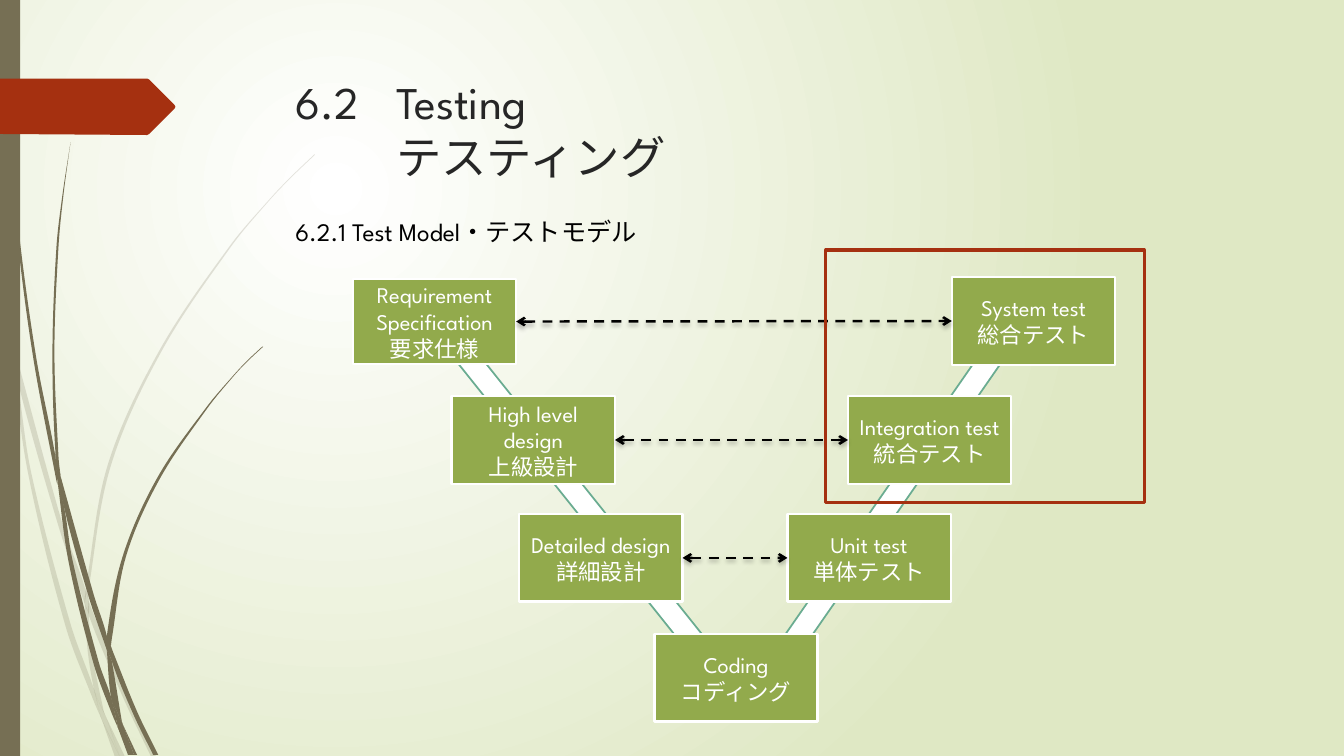
from math import dist

from lxml import etree
from pptx import Presentation
from pptx.dml.color import RGBColor
from pptx.enum import dml, shapes, text
from pptx.oxml import ns
from pptx.util import Inches, Pt

FONT = "League Spartan"
WHITE = RGBColor(0xFF, 0xFF, 0xFF)
BLACK = RGBColor(0, 0, 0)
INK = RGBColor(0x26, 0x26, 0x26)
PALE = RGBColor(0xDF, 0xE8, 0xC4)
BROWN = RGBColor(0x76, 0x6F, 0x54)
RUST = RGBColor(0xA5, 0x30, 0x10)
GREEN = RGBColor(0x92, 0xAA, 0x4C)
TEAL = RGBColor(0x6A, 0xAC, 0x91)

TITLE = ["6.2 \tTesting", "\t\tテスティング"]
SUBTITLE = ["6.2.1 Test Model・テストモデル"]

# name: (English, Japanese, left, top, height)
BOX_W = 1.62
STEPS = {
    "requirement": ("Requirement Specification", "要求仕様", 3.5, 2.77, 0.84),
    "high level": ("High level design", "上級設計", 4.48, 3.93, 0.87),
    "detailed": ("Detailed design", "詳細設計", 5.15, 5.1, 0.87),
    "coding": ("Coding", "コディング", 6.49, 6.29, 0.87),
    "unit": ("Unit test", "単体テスト", 7.81, 5.1, 0.87),
    "integration": ("Integration test", "統合テスト", 8.41, 3.93, 0.87),
    "system": ("System test", "総合テスト", 9.44, 2.75, 0.87),
}
PAIRS = [("requirement", "system"), ("high level", "integration"), ("detailed", "unit")]

# left, top, width, height, rotation
V_ARMS = [(7.35, 3.05, 3.14, 4.01, 356.7), (4.14, 3.19, 3.12, 3.73, 101.5)]

# Each blade piece: left edge and right edge, both from top to bottom
PALE_GRASS = [
    ([(0, 2.99), (.1, 3.44), (.11, 3.5)], [(0, 2.82), (.09, 3.22), (.11, 3.5)]),
    ([(.14, 3.45), (.17, 3.76), (.58, 5.22), (.84, 5.99)],
     [(.14, 3.45), (.62, 5.2), (.85, 5.86), (.84, 5.99)]),
    ([(.88, 5.96), (.88, 6.1), (1.23, 6.94), (1.5, 7.51)],
     [(.88, 5.96), (.92, 6.07), (1.27, 6.92), (1.55, 7.51)]),
    ([(1.05, 7.11), (1.19, 7.51)], [(1.05, 7.11), (1.24, 7.51)]),
    ([(.11, 3.5), (.28, 4.7), (.65, 6.21), (.92, 6.93), (1.01, 7.14)],
     [(.11, 3.5), (.17, 3.76), (.31, 4.69), (.7, 6.19), (.93, 6.83), (.99, 7.07), (1.01, 7.14)]),
    ([(.84, 5.99), (.87, 6.46), (.93, 6.83), (.96, 6.92), (1.05, 7.11)],
     [(.84, 5.99), (.88, 6.08), (.88, 6.1), (.91, 6.46), (1.03, 7.06), (1.05, 7.11)]),
    ([(3.12, 1.53), (2.89, 1.75), (2.68, 1.97), (2.28, 2.44), (1.58, 3.48), (1.07, 4.61),
      (.85, 5.84), (.85, 5.86), (.88, 5.96)],
     [(3.12, 1.54), (2.9, 1.75), (2.68, 1.98), (2.29, 2.45), (1.6, 3.49), (1.1, 4.62),
      (.88, 5.84), (.88, 5.96)]),
    ([(1.01, 7.14), (1.14, 7.51)], [(1.01, 7.14), (1.19, 7.51)]),
    ([(.85, 5.86), (.84, 5.99), (.88, 6.08)], [(.85, 5.86), (.88, 5.96), (.88, 6.1)]),
    ([(.93, 6.83), (.99, 7.07), (1.01, 7.14), (1.19, 7.51)],
     [(.93, 6.83), (.96, 6.92), (1.05, 7.11), (1.19, 7.51)]),
]
DARK_GRASS = [
    ([(.03, 0), (.04, .48), (.07, 1.1), (.17, 2.33), (.33, 3.55), (.56, 4.77), (.57, 4.81)],
     [(.04, 0), (.05, .48), (.08, 1.09), (.19, 2.32), (.36, 3.55), (.55, 4.53), (.57, 4.81)]),
    ([(.6, 4.72), (.64, 5.05), (.88, 5.92), (1.06, 6.45)],
     [(.6, 4.72), (.93, 5.9), (1.06, 6.31), (1.06, 6.45)]),
    ([(1.1, 6.41), (1.11, 6.56), (1.32, 7.08), (1.52, 7.49)],
     [(1.1, 6.41), (1.13, 6.49), (1.36, 7.06), (1.57, 7.49)]),
    ([(.57, 4.77), (.68, 5.57), (.93, 6.59), (1.11, 7.08), (1.17, 7.22)],
     [(.57, 4.77), (.64, 5.05), (.72, 5.56), (.98, 6.57), (1.1, 6.91), (1.16, 7.17), (1.17, 7.22)]),
    ([(.7, 1.41), (.62, 1.93), (.56, 2.45), (.52, 3.49), (.55, 4.49), (.6, 4.72)],
     [(.7, 1.41), (.63, 1.93), (.58, 2.45), (.54, 3.49), (.58, 4.53), (.6, 4.72)]),
    ([(1.22, 7.19), (1.33, 7.49)], [(1.22, 7.19), (1.36, 7.49)]),
    ([(.55, 4.49), (.55, 4.53), (.57, 4.77), (.64, 5.05)], [(.55, 4.49), (.6, 4.72), (.64, 5.05)]),
    ([(2.6, 3.44), (2.45, 3.58), (2.31, 3.73), (2.04, 4.05), (1.56, 4.74), (1.22, 5.51),
      (1.06, 6.31), (1.1, 6.41)],
     [(2.61, 3.44), (2.45, 3.59), (2.31, 3.74), (2.05, 4.06), (1.58, 4.76), (1.25, 5.52),
      (1.11, 6.33), (1.1, 6.41)]),
    ([(1.17, 7.22), (1.27, 7.49)], [(1.17, 7.22), (1.31, 7.49)]),
    ([(1.06, 6.45), (1.1, 6.91), (1.16, 7.06), (1.22, 7.19)],
     [(1.06, 6.45), (1.09, 6.51), (1.11, 6.56), (1.21, 7.16), (1.22, 7.19)]),
    ([(1.06, 6.31), (1.06, 6.45), (1.09, 6.51), (1.11, 6.56)],
     [(1.06, 6.31), (1.1, 6.41), (1.11, 6.56)]),
    ([(1.1, 6.91), (1.16, 7.17), (1.17, 7.22), (1.3, 7.49)],
     [(1.1, 6.91), (1.16, 7.06), (1.22, 7.19), (1.33, 7.49)]),
]
TAG = [(0, .78), (1.46, .78), (1.48, .79), (1.73, 1.04), (1.74, 1.06), (1.73, 1.08),
       (1.48, 1.33), (1.46, 1.34), (0, 1.33)]


def sub(parent, tag, **attrs):
    el = etree.SubElement(parent, ns.qn(tag))
    for key, value in attrs.items():
        el.set(key, str(value))
    return el


def paint(sp, fill=None, line=None, width=0):
    sp.shadow.inherit = False
    for part, color in ((sp.fill, fill), (sp.line.fill, line)):
        if color is None:
            part.background()
        else:
            part.solid()
            part.fore_color.rgb = color
    if line is not None:
        sp.line.width = Pt(width)
    return sp


def add_preset(s, kind, box, **style):
    return paint(s.shapes.add_shape(kind, *map(Inches, box)), **style)


def add_outline(s, points, fill):
    (x, y), *rest = [(Inches(x), Inches(y)) for x, y in points]
    builder = s.shapes.build_freeform(x, y)
    builder.add_line_segments(rest, close=True)
    return paint(builder.convert_to_shape(), fill)


def bezier(edge):
    """Control, control and end point of each segment of a smooth edge."""
    ends = [edge[0], *edge, edge[-1]]
    points = []
    for a, b, c, d in zip(ends, ends[1:], ends[2:], ends[3:]):
        out, back = (dist(b, c) / 3 / dist(*pair) for pair in ((a, c), (b, d)))
        points += [tuple(q + (r - p) * out for p, q, r in zip(a, b, c)),
                   tuple(r - (u - q) * back for q, r, u in zip(b, c, d)), c]
    return points


def add_grass(s, pieces, opacity):
    for left, right in pieces:
        base = [left[-1], right[-1], right[-1]]
        sp = add_outline(s, [left[0], *bezier(left), *base, *bezier(right[::-1])], BROWN)
        outline = sp._element.spPr.find(".//" + ns.qn("a:path"))
        lines = outline.findall(ns.qn("a:lnTo"))
        for trio in zip(*[iter(lines)] * 3):
            curve = etree.Element(ns.qn("a:cubicBezTo"))
            trio[0].addprevious(curve)
            for line in trio:
                curve.append(line[0])
                outline.remove(line)
        if opacity < 100:
            sub(sp._element.spPr.find(".//" + ns.qn("a:srgbClr")), "a:alpha", val=opacity * 1000)


def add_run(p, words, size, color):
    r = p.add_run()
    r.text = words
    r.font.name = FONT
    r.font.size = Pt(size)
    r.font.color.rgb = color
    sub(r.font._element, "a:ea", typeface=FONT)


def add_heading(s, box, lines, size, color, wrap):
    tf = s.shapes.add_textbox(*map(Inches, box)).text_frame
    tf.word_wrap = wrap
    p = tf.paragraphs[0]
    tabs = sub(p._p.get_or_add_pPr(), "a:tabLst")
    for stop in (0.5, 1):
        sub(tabs, "a:tab", pos=Inches(stop), algn="l")
    for i, words in enumerate(lines):
        if i:
            p.add_line_break()
        add_run(p, words, size, color)


def add_step(s, english, japanese, left, top, height):
    sp = add_preset(s, shapes.MSO_SHAPE.RECTANGLE, (left, top, BOX_W, height),
                    fill=GREEN, line=WHITE, width=1.75)
    tf = sp.text_frame
    tf.word_wrap = True
    tf.vertical_anchor = text.MSO_ANCHOR.MIDDLE
    for p, words in zip((tf.paragraphs[0], tf.add_paragraph()), (english, japanese)):
        p.alignment = text.PP_ALIGN.CENTER
        add_run(p, words, 16, WHITE)
    return sp


def add_link(s, design, test):
    link = s.shapes.add_connector(shapes.MSO_CONNECTOR.STRAIGHT, 0, 0, 0, 0)
    link.begin_connect(design, 3)
    link.end_connect(test, 1)
    link.line.color.rgb = BLACK
    link.line.width = Pt(1.75)
    link.line.dash_style = dml.MSO_LINE.DASH
    for end in ("a:headEnd", "a:tailEnd"):
        sub(link._element.spPr.find(ns.qn("a:ln")), end, type="arrow")
    shadow = sub(sub(link._element.spPr, "a:effectLst"), "a:outerShdw",
                 blurRad=Pt(3), dist=Pt(2), dir=90 * 60000, rotWithShape=0)
    sub(sub(shadow, "a:srgbClr", val=BLACK), "a:alpha", val=25000)


def set_background(s):
    fill = s.background.fill
    fill.gradient()
    for stop, color, position in zip(fill.gradient_stops, (WHITE, PALE), (0, 1)):
        stop.color.rgb = color
        stop.position = position
    grad = s._element.cSld.find(".//" + ns.qn("a:gradFill"))
    grad.remove(grad.find(ns.qn("a:lin")))
    sub(sub(grad, "a:path", path="circle"), "a:fillToRect", l=50000, t=50000, r=100000, b=100000)


prs = Presentation()
prs.slide_width, prs.slide_height = Inches(13.33), Inches(7.5)
s = prs.slides.add_slide(prs.slide_layouts[6])
set_background(s)
add_grass(s, PALE_GRASS, 20)
add_grass(s, DARK_GRASS, 100)
add_preset(s, shapes.MSO_SHAPE.RECTANGLE, (0, 0, 0.2, 7.5), fill=BROWN)
add_outline(s, TAG, RUST)
add_heading(s, (2.83, 0.69, 9.75, 1.4), TITLE, 32.4, INK, True)
add_heading(s, (2.83, 2.1, 3.91, 0.71), SUBTITLE, 18, BLACK, False)
for *box, angle in V_ARMS:
    arm = add_preset(s, shapes.MSO_SHAPE.DIAGONAL_STRIPE, box, fill=WHITE, line=TEAL, width=1.25)
    arm.adjustments[0] = 0.91
    arm.rotation = angle
boxes = {name: add_step(s, *step) for name, step in STEPS.items()}
for design, test in PAIRS:
    add_link(s, boxes[design], boxes[test])
add_preset(s, shapes.MSO_SHAPE.RECTANGLE, (8.19, 2.48, 3.16, 2.51), line=RUST, width=2.25)
prs.save("out.pptx")
